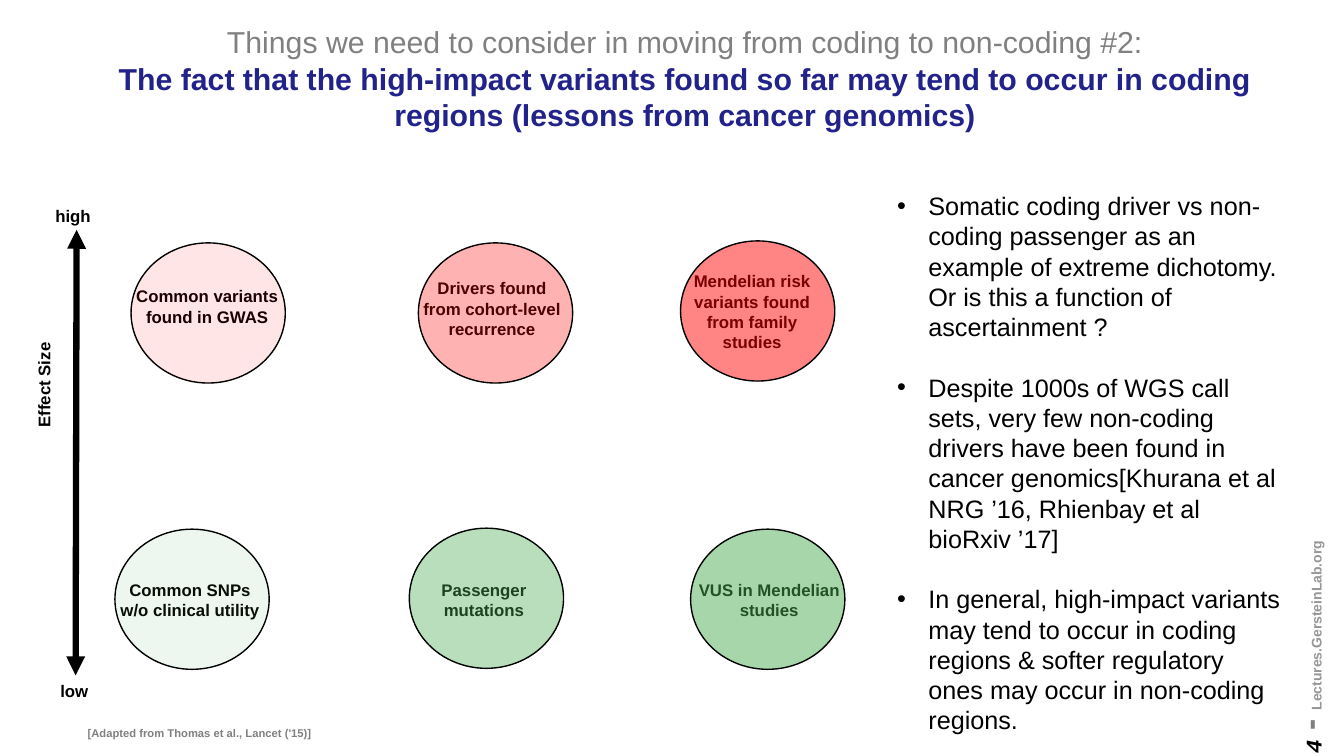
from dataclasses import dataclass

import pptx
import pptx.dml.color
import pptx.enum.shapes
import pptx.enum.text
import pptx.oxml
import pptx.oxml.ns
import pptx.util
from pptx.util import Inches

RGBColor = pptx.dml.color.RGBColor
PP_ALIGN = pptx.enum.text.PP_ALIGN
AUTO_SIZE = pptx.enum.text.MSO_AUTO_SIZE

BLACK = RGBColor(0x00, 0x00, 0x00)
GREY = RGBColor(0x80, 0x80, 0x80)
LIGHT_GREY = RGBColor(0x96, 0x96, 0x96)
NAVY = RGBColor(0x22, 0x22, 0x8B)
RED = RGBColor(0xFF, 0x00, 0x00)
GREEN = RGBColor(0x4B, 0xAB, 0x50)

CIRCLE_WIDTH, CIRCLE_HEIGHT = 1.53, 1.39


@dataclass
class Label:
    text: str
    left: float
    top: float
    width: float
    height: float
    align: PP_ALIGN = PP_ALIGN.CENTER
    size: float = 12
    color: RGBColor = BLACK
    bold: bool = True
    rotation: float = 0
    wrap: bool = True


@dataclass
class Circle:
    left: float
    top: float
    color: RGBColor
    opacity: int  # percent


LABELS = [
    # Variant classes
    Label("Common variants found in GWAS", 1.22, 2.79, 1.67, 0.5),
    Label("Drivers found from cohort-level recurrence", 4.04, 2.71, 1.68, 0.71),
    Label("Mendelian risk variants found from family\nstudies", 6.76, 2.64, 1.4, 0.91),
    Label("Common SNPs w/o clinical utility", 1.07, 5.7, 1.63, 0.5),
    Label("Passenger mutations", 3.92, 5.7, 1.76, 0.5),
    Label("VUS in Mendelian studies", 6.58, 5.7, 2.1, 0.5),
    # Axis
    Label("Effect Size", -0.36, 3.67, 1.59, 0.3, rotation=270),
    Label("high", 0.45, 1.99, 0.61, 0.3, PP_ALIGN.LEFT),
    Label("low", 0.5, 6.7, 0.61, 0.3, PP_ALIGN.LEFT),
    # Source line
    Label("[Adapted from Thomas et al., Lancet ('15)]", 0.77, 7.16, 2.45, 0.24,
          PP_ALIGN.LEFT, size=8, color=GREY, wrap=False),
]

CIRCLES = [
    Circle(1.3, 2.41, RED, 10),
    Circle(4.15, 2.41, RED, 30),
    Circle(6.75, 2.39, RED, 48),
    Circle(1.14, 5.25, GREEN, 9),
    Circle(4.06, 5.24, GREEN, 39),
    Circle(6.85, 5.25, GREEN, 48),
]

BULLETS = [
    "Somatic coding driver vs non-coding passenger as an example of extreme "
    "dichotomy. Or is this a function of ascertainment ?",
    "Despite 1000s of WGS call sets, very few non-coding drivers have been found "
    "in cancer genomics[Khurana et al NRG ’16, Rhienbay et al bioRxiv ’17]",
    "In general, high-impact variants may tend to occur in coding regions & softer "
    "regulatory ones may occur in non-coding regions.",
]


def add_element(parent, tag: str, **attributes: str):
    element = pptx.oxml.parse_xml(f"<{tag} {pptx.oxml.ns.nsdecls('a')}/>")
    for name, value in attributes.items():
        element.set(name, value)
    parent.append(element)


def style(span, size: float, color: RGBColor, bold: bool = False,
          italic: bool = False, face: str = "Arial") -> None:
    span.font.name = face
    span.font.size = pptx.util.Pt(size)
    span.font.color.rgb = color
    span.font.bold = bold
    span.font.italic = italic


def add_label(page, label: Label):
    box = page.shapes.add_textbox(Inches(label.left), Inches(label.top),
                                  Inches(label.width), Inches(label.height))
    box.rotation = label.rotation
    frame = box.text_frame
    frame.word_wrap = label.wrap
    frame.auto_size = AUTO_SIZE.SHAPE_TO_FIT_TEXT
    frame.text = label.text
    for para in frame.paragraphs:
        para.alignment = label.align
        for span in para.runs:
            style(span, label.size, label.color, label.bold)
    return box


def add_circle(page, circle: Circle) -> None:
    shape = page.shapes.add_shape(
        pptx.enum.shapes.MSO_SHAPE.OVAL, Inches(circle.left), Inches(circle.top),
        Inches(CIRCLE_WIDTH), Inches(CIRCLE_HEIGHT))
    shape.shadow.inherit = False
    shape.fill.solid()
    shape.fill.fore_color.rgb = circle.color
    color = shape.element.spPr.find(".//" + pptx.oxml.ns.qn("a:srgbClr"))
    add_element(color, "a:alpha", val=str(circle.opacity * 1000))
    shape.line.color.rgb = BLACK
    shape.line.width = pptx.util.Pt(1)


def add_title(page) -> None:
    title = page.shapes.title
    title.left, title.top = Inches(0.76), Inches(0.26)
    title.width, title.height = Inches(12.07), Inches(1.03)
    frame = title.text_frame
    frame.auto_size = AUTO_SIZE.NONE
    frame.vertical_anchor = pptx.enum.text.MSO_ANCHOR.MIDDLE
    frame.text = ("Things we need to consider in moving from coding to non-coding #2:\n"
                  "The fact that the high-impact variants found so far may tend to "
                  "occur in coding regions (lessons from cancer genomics)")
    lead, message = frame.paragraphs
    lead.alignment = message.alignment = PP_ALIGN.CENTER
    style(lead.runs[0], 21.6, GREY)
    style(message.runs[0], 21.6, NAVY, bold=True)


def add_bullets(page) -> None:
    box = add_label(page, Label("\n".join(BULLETS), 8.8, 1.84, 4.03, 5.55,
                                PP_ALIGN.LEFT, size=18, bold=False))
    for index, para in enumerate(box.text_frame.paragraphs):
        if index:
            para.space_before = pptx.util.Pt(21.6)
        properties = para._p.get_or_add_pPr()
        properties.set("marL", str(Inches(0.31)))
        properties.set("indent", str(-Inches(0.31)))
        add_element(properties, "a:buFont", typeface="Arial")
        add_element(properties, "a:buChar", char="•")


def add_effect_axis(page) -> None:
    axis = page.shapes.add_connector(
        pptx.enum.shapes.MSO_CONNECTOR.STRAIGHT,
        Inches(0.76), Inches(2.28), Inches(0.75), Inches(6.7))
    axis.line.color.rgb = BLACK
    axis.line.width = pptx.util.Pt(4.5)
    line = axis.line._get_or_add_ln()
    add_element(line, "a:headEnd", type="triangle")
    add_element(line, "a:tailEnd", type="triangle")
    add_element(axis.element.spPr, "a:effectLst")


def add_side_note(page) -> None:
    box = page.shapes.add_textbox(Inches(11.23), Inches(5.7), Inches(3.37), Inches(0.38))
    box.rotation = 270
    box.text_frame.word_wrap = True
    para = box.text_frame.paragraphs[0]
    number, dash, site = (para.add_run() for _ in range(3))
    number.text, dash.text, site.text = "4", " - ", "Lectures.GersteinLab.org"
    style(number, 16, BLACK, bold=True, italic=True, face="Courier New")
    style(dash, 24, GREY, bold=True)
    style(site, 10, LIGHT_GREY, bold=True)


def main() -> None:
    deck = pptx.Presentation()
    deck.slide_width, deck.slide_height = Inches(13.33), Inches(7.5)
    page = deck.slides.add_slide(deck.slide_layouts[5])

    add_side_note(page)
    add_title(page)
    add_bullets(page)
    add_effect_axis(page)
    # Labels lie beneath the tinted circles
    for label in LABELS:
        add_label(page, label)
    for circle in CIRCLES:
        add_circle(page, circle)

    deck.save("out.pptx")


if __name__ == "__main__":
    main()
